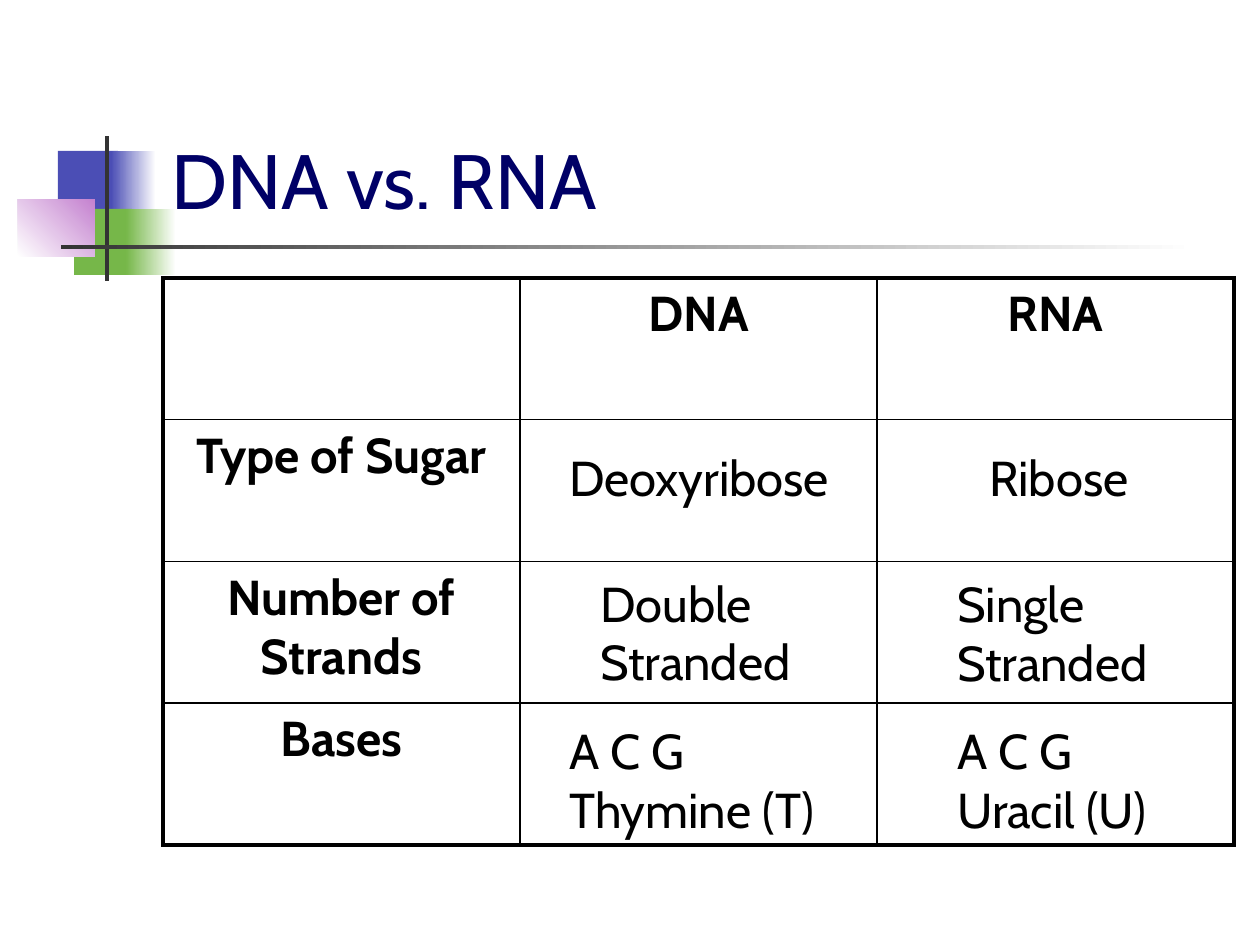
from lxml import etree
from pptx import Presentation
from pptx.dml.color import RGBColor
from pptx.enum.shapes import MSO_SHAPE as Shape
from pptx.enum.text import MSO_ANCHOR as Anchor, MSO_AUTO_SIZE as AutoSize, PP_ALIGN as Align
from pptx.oxml.ns import qn
from pptx.util import Emu, Pt

EMU_PER_PX = 914400 / 126
BLUE = RGBColor(0x4B, 0x4E, 0xB5)
GREEN = RGBColor(0x76, 0xB7, 0x49)
PINK = RGBColor(0xC4, 0x81, 0xCF)
DARK = RGBColor(0x33, 0x33, 0x33)
NAVY = RGBColor(0x00, 0x00, 0x66)
BLACK = RGBColor(0x00, 0x00, 0x00)
WHITE = RGBColor(0xFF, 0xFF, 0xFF)
THICK, THIN = Pt(2.25), Pt(1)


def px(*lengths):
    return [Emu(round(length * EMU_PER_PX)) for length in lengths]


class SlideBuilder:
    font = "Cabin"
    body_size = 28

    def __init__(self, slide):
        self.slide = slide

    def add_span(self, para, words, size=body_size, color=BLACK, bold=False):
        span = para.add_run()
        span.text = words
        span.font.name = self.font
        span.font.size = Pt(size)
        span.font.bold = bold
        span.font.color.rgb = color

    def block(self, place, color, fade_to=None, angle=0):
        block = self.slide.shapes.add_shape(Shape.RECTANGLE, *px(*place))
        block.shadow.inherit = False
        block.line.fill.background()
        if fade_to is None:
            block.fill.solid()
            block.fill.fore_color.rgb = color
            return
        block.fill.gradient()
        block.fill.gradient_angle = angle
        for stop, shade, position in zip(block.fill.gradient_stops, (color, fade_to), (0, 1)):
            stop.color.rgb = shade
            stop.position = position

    def text(self, place, lines, wrap=False, anchor=Anchor.TOP, auto_size=AutoSize.SHAPE_TO_FIT_TEXT, **style):
        frame = self.slide.shapes.add_textbox(*px(*place)).text_frame
        frame.word_wrap = wrap
        frame.auto_size = auto_size
        frame.vertical_anchor = anchor
        for index, line in enumerate(lines):
            para = frame.add_paragraph() if index else frame.paragraphs[0]
            self.add_span(para, line, **style)

    def border(self, cell, widths):
        props = cell._tc.get_or_add_tcPr()
        for index, (side, width) in enumerate(widths.items()):
            line = etree.Element(qn(f"a:ln{side}"), w=str(width))
            fill = etree.SubElement(line, qn("a:solidFill"))
            etree.SubElement(fill, qn("a:srgbClr"), val=str(BLACK))
            props.insert(index, line)

    def table(self, place, rows):
        last_row, last_col = len(rows) - 1, len(rows[0]) - 1
        table = self.slide.shapes.add_table(len(rows), len(rows[0]), *px(*place)).table
        table.first_row = table.horz_banding = False
        for r, row in enumerate(rows):
            for c, words in enumerate(row):
                cell = table.cell(r, c)
                cell.fill.background()
                outer = {"L": c == 0, "R": c == last_col, "T": r == 0, "B": r == last_row}
                self.border(cell, {side: THICK if edge else THIN for side, edge in outer.items()})
                if words:
                    para = cell.text_frame.paragraphs[0]
                    para.alignment = Align.CENTER
                    para.space_before = Pt(0.2 * self.body_size)
                    self.add_span(para, words, bold=True)


def main():
    deck = Presentation()
    deck.slide_width, deck.slide_height = px(1260, 945)
    page = SlideBuilder(deck.slides.add_slide(deck.slide_layouts[6]))

    page.block((58, 151, 60, 66), BLUE)
    page.block((111, 151, 45, 66), BLUE, WHITE)
    page.block((74, 209, 58, 66), GREEN)
    page.block((126, 209, 50, 66), GREEN, WHITE)
    page.block((18, 199, 77, 58), WHITE, PINK, 45)
    page.block((105, 136, 4, 145), DARK)
    page.block((61, 245, 1134, 4), DARK, WHITE)

    page.text((159, 29, 1074, 202), ["DNA vs. RNA"], wrap=True, anchor=Anchor.BOTTOM,
              auto_size=AutoSize.NONE, size=44, color=NAVY)
    page.table((163, 278, 1071, 567), [
        ("", "DNA", "RNA"),
        ("Type of Sugar", "", ""),
        ("Number of Strands", "", ""),
        ("Bases", "", ""),
    ])
    page.text((557, 441, 290, 72), ["Deoxyribose"])
    page.text((977, 441, 169, 72), ["Ribose"])
    page.text((588, 567, 252, 130), ["Double Stranded"], wrap=True)
    page.text((945, 567, 221, 130), ["Single", "Stranded"])
    page.text((557, 714, 292, 130), ["A C G", "Thymine (T)"])
    page.text((945, 714, 231, 130), ["A C G", "Uracil (U)"])
    deck.save("out.pptx")


if __name__ == "__main__":
    main()
